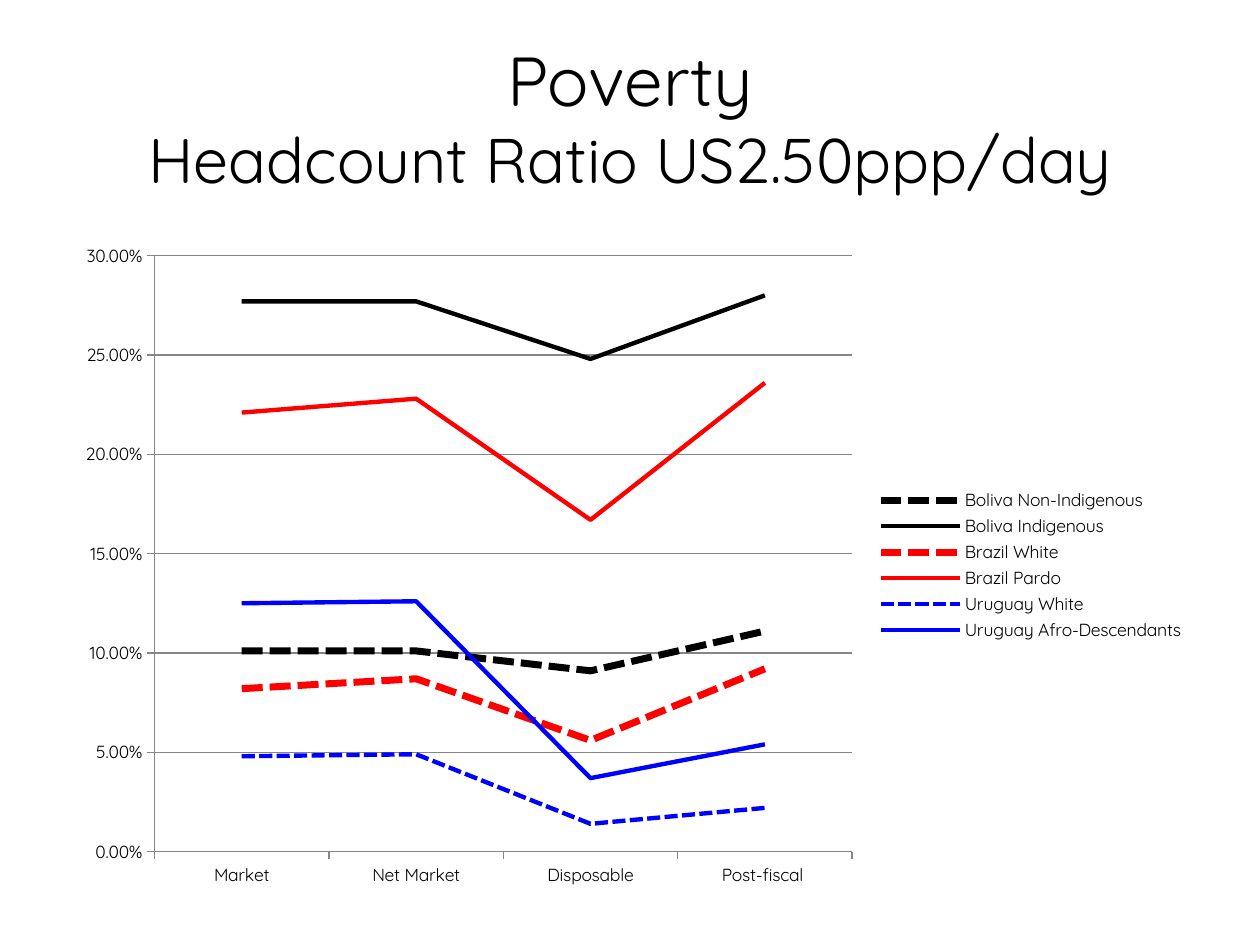
from pptx import Presentation
from pptx.chart.data import CategoryChartData
from pptx.dml.color import RGBColor
from pptx.enum.chart import XL_CHART_TYPE, XL_LEGEND_POSITION, XL_MARKER_STYLE, XL_TICK_MARK
from pptx.enum.dml import MSO_LINE
from pptx.enum.text import MSO_ANCHOR, MSO_AUTO_SIZE, PP_ALIGN
from pptx.util import Inches, Pt

LINE_CHART = XL_CHART_TYPE.LINE
LEGEND_RIGHT = XL_LEGEND_POSITION.RIGHT
NO_MARKER = XL_MARKER_STYLE.NONE
TICK_OUT = XL_TICK_MARK.OUTSIDE
SOLID, DASHED = MSO_LINE.SOLID, MSO_LINE.SQUARE_DOT
MIDDLE = MSO_ANCHOR.MIDDLE
NO_AUTOFIT = MSO_AUTO_SIZE.NONE
CENTER = PP_ALIGN.CENTER
TITLE_ONLY = 5

BLACK, RED, BLUE, GRAY = "000000", "FF0000", "0000FF", "868686"

INCOME_STAGES = ["Market", "Net Market", "Disposable", "Post-fiscal "]
# name, headcount ratios, colour, line width in points, dash
GROUPS = [
    ("Boliva Non-Indigenous", (0.101, 0.101, 0.091, 0.111), BLACK, 4, DASHED),
    ("Boliva Indigenous", (0.277, 0.277, 0.248, 0.28), BLACK, 2.5, SOLID),
    ("Brazil White", (0.082, 0.087, 0.056, 0.092), RED, 4, DASHED),
    ("Brazil Pardo", (0.221, 0.228, 0.167, 0.236), RED, 2.5, SOLID),
    ("Uruguay White", (0.048, 0.049, 0.014, 0.022), BLUE, 2.5, DASHED),
    ("Uruguay Afro-Descendants", (0.125, 0.126, 0.037, 0.054), BLUE, 2.5, SOLID),
]


def rgb(value):
    return RGBColor.from_string(value)


class SlideBuilder:
    """Holds the text style and the slide being built."""

    font_name = "Quicksand"
    text_color = BLACK

    def __init__(self, slide):
        self.slide = slide

    def style_font(self, font, size):
        font.name = self.font_name
        font.size = Pt(size)
        font.bold = False
        font.color.rgb = rgb(self.text_color)

    def style_line(self, line, color, width, dash=SOLID):
        line.color.rgb = rgb(color)
        line.width = Pt(width)
        line.dash_style = dash

    def title(self, lines, left, top, width, height):
        """Fill the title with (text, size) lines in one paragraph."""
        box = self.slide.shapes.title
        box.left, box.top = Inches(left), Inches(top)
        box.width, box.height = Inches(width), Inches(height)
        frame = box.text_frame
        frame.word_wrap = True
        frame.auto_size = NO_AUTOFIT
        frame.vertical_anchor = MIDDLE
        para = frame.paragraphs[0]
        para.alignment = CENTER
        for index, (text, size) in enumerate(lines):
            if index:
                para.add_line_break()
            span = para.add_run()
            span.text = text
            self.style_font(span.font, size)

    def line_chart(self, categories, groups, left, top, width, height):
        data = CategoryChartData(number_format="0.00%")
        data.categories = categories
        for name, values, *_ in groups:
            data.add_series(name, values)
        chart = self.slide.shapes.add_chart(
            LINE_CHART, Inches(left), Inches(top), Inches(width), Inches(height), data
        ).chart
        self.style_font(chart.font, 10)
        chart.has_title = False
        chart.has_legend = True
        chart.legend.position = LEGEND_RIGHT
        chart.legend.include_in_layout = False
        plot = chart.plots[0]
        plot.vary_by_categories = False
        for series, (_, _, color, weight, dash) in zip(plot.series, groups):
            series.smooth = False
            series.marker.style = NO_MARKER
            self.style_line(series.format.line, color, weight, dash)
        self.style_axes(chart)

    def style_axes(self, chart):
        for axis in (chart.category_axis, chart.value_axis):
            axis.major_tick_mark = TICK_OUT
            self.style_line(axis.format.line, GRAY, 0.75)
        axis = chart.value_axis
        axis.minimum_scale, axis.maximum_scale, axis.major_unit = 0, 0.3, 0.05
        axis.has_major_gridlines = True
        self.style_line(axis.major_gridlines.format.line, GRAY, 0.75)
        axis.tick_labels.number_format = "0.00%"
        axis.tick_labels.number_format_is_linked = False


def main():
    deck = Presentation()
    deck.slide_width, deck.slide_height = Inches(10), Inches(7.5)
    page = SlideBuilder(deck.slides.add_slide(deck.slide_layouts[TITLE_ONLY]))
    page.title(
        [("Poverty", 39.6), ("Headcount Ratio US2.50ppp/day", 36)], 0.5, 0.3, 9, 1.25
    )
    page.line_chart(INCOME_STAGES, GROUPS, 0.5, 1.84, 9, 5.29)
    deck.save("out.pptx")


if __name__ == "__main__":
    main()
